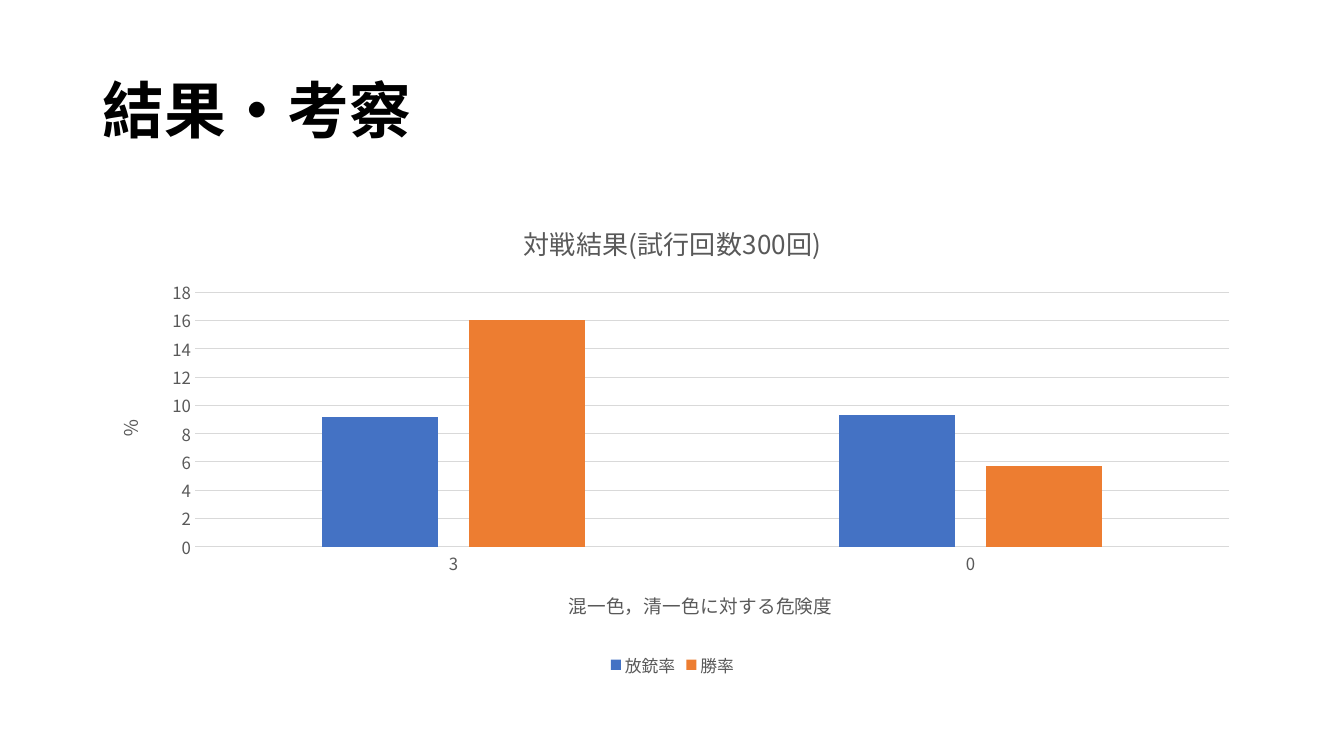
from lxml.etree import Element
from pptx import Presentation
from pptx.chart.data import CategoryChartData
from pptx.dml.color import RGBColor
from pptx.enum.chart import XL_CHART_TYPE as ChartType
from pptx.enum.chart import XL_LEGEND_POSITION as LegendPosition
from pptx.enum.chart import XL_TICK_MARK as TickMark
from pptx.enum.text import MSO_ANCHOR as Anchor
from pptx.enum.text import PP_ALIGN as Align
from pptx.oxml.ns import qn
from pptx.util import Inches, Pt

BLACK = RGBColor(0x00, 0x00, 0x00)
GRAY = RGBColor(0x59, 0x59, 0x59)
GRID = RGBColor(0xD9, 0xD9, 0xD9)
BLUE = RGBColor(0x44, 0x72, 0xC4)
ORANGE = RGBColor(0xED, 0x7D, 0x31)
FONT = "Noto Sans CJK JP"
RISKS = ["3", "0"]
RATES = [("放銃率", [9.2, 9.3], BLUE), ("勝率", [16, 5.7], ORANGE)]


def style_font(font, size, color=GRAY, bold=False):
    """Format a font for both Latin and East Asian text."""
    font.name = FONT
    font.size = Pt(size)
    font.bold = bold
    font.color.rgb = color
    latin = font._element.find(qn("a:latin"))
    latin.addnext(Element(qn("a:ea"), typeface=FONT))


def write_text(frame, text, **style):
    """Write one formatted run into a text frame and return its paragraph."""
    para = frame.paragraphs[0]
    span = para.add_run()
    span.text = text
    style_font(span.font, **style)
    return para


def style_line(line, color):
    """Give a chart line its colour and hairline width."""
    line.color.rgb = color
    line.width = Pt(0.75)


def style_axis(axis, title, turn):
    """Format an axis and its title, turned by the given angle."""
    axis.major_tick_mark = TickMark.NONE
    axis.minor_tick_mark = TickMark.NONE
    style_font(axis.tick_labels.font, 12)
    frame = axis.axis_title.text_frame
    write_text(frame, title, size=13.3)
    frame._txBody.bodyPr.set("rot", str(turn * 60000))


def add_heading(page, text, box):
    """Place the slide title in the box."""
    title = page.shapes.title
    title.left, title.top, title.width, title.height = box
    title.text_frame.vertical_anchor = Anchor.MIDDLE
    title.text_frame.word_wrap = True
    para = write_text(title.text_frame, text, size=44, color=BLACK, bold=True)
    para.alignment = Align.LEFT
    para.line_spacing = 0.9


def add_rate_chart(page, box):
    """Place the column chart of match results in the box."""
    data = CategoryChartData()
    data.categories = RISKS
    for name, values, _ in RATES:
        data.add_series(name, values)
    chart = page.shapes.add_chart(ChartType.COLUMN_CLUSTERED, *box, data).chart
    style_font(chart.font, 10, BLACK)
    chart.has_title = True
    write_text(chart.chart_title.text_frame, "対戦結果(試行回数300回)", size=18.6)
    chart.chart_title.include_in_layout = False

    chart.has_legend = True
    chart.legend.position = LegendPosition.BOTTOM
    chart.legend.include_in_layout = False
    style_font(chart.legend.font, 12)

    style_axis(chart.category_axis, "混一色，清一色に対する危険度", 0)
    style_line(chart.category_axis.format.line, GRID)
    style_axis(chart.value_axis, "％", -90)
    chart.value_axis.format.line.fill.background()
    style_line(chart.value_axis.major_gridlines.format.line, GRID)

    plot = chart.plots[0]
    plot.gap_width = 219
    plot.overlap = -27
    plot.vary_by_categories = False
    for series, (_, _, color) in zip(plot.series, RATES):
        series.format.fill.solid()
        series.format.fill.fore_color.rgb = color


def main():
    """Build the results slide and save it."""
    deck = Presentation()
    deck.slide_width, deck.slide_height = Inches(13.33), Inches(7.5)
    page = deck.slides.add_slide(deck.slide_layouts[5])
    left, width = Inches(0.92), Inches(11.5)
    add_heading(page, "結果・考察", (left, Inches(0.4), width, Inches(1.45)))
    add_rate_chart(page, (left, Inches(2), width, Inches(4.76)))
    deck.save("out.pptx")


if __name__ == "__main__":
    main()
